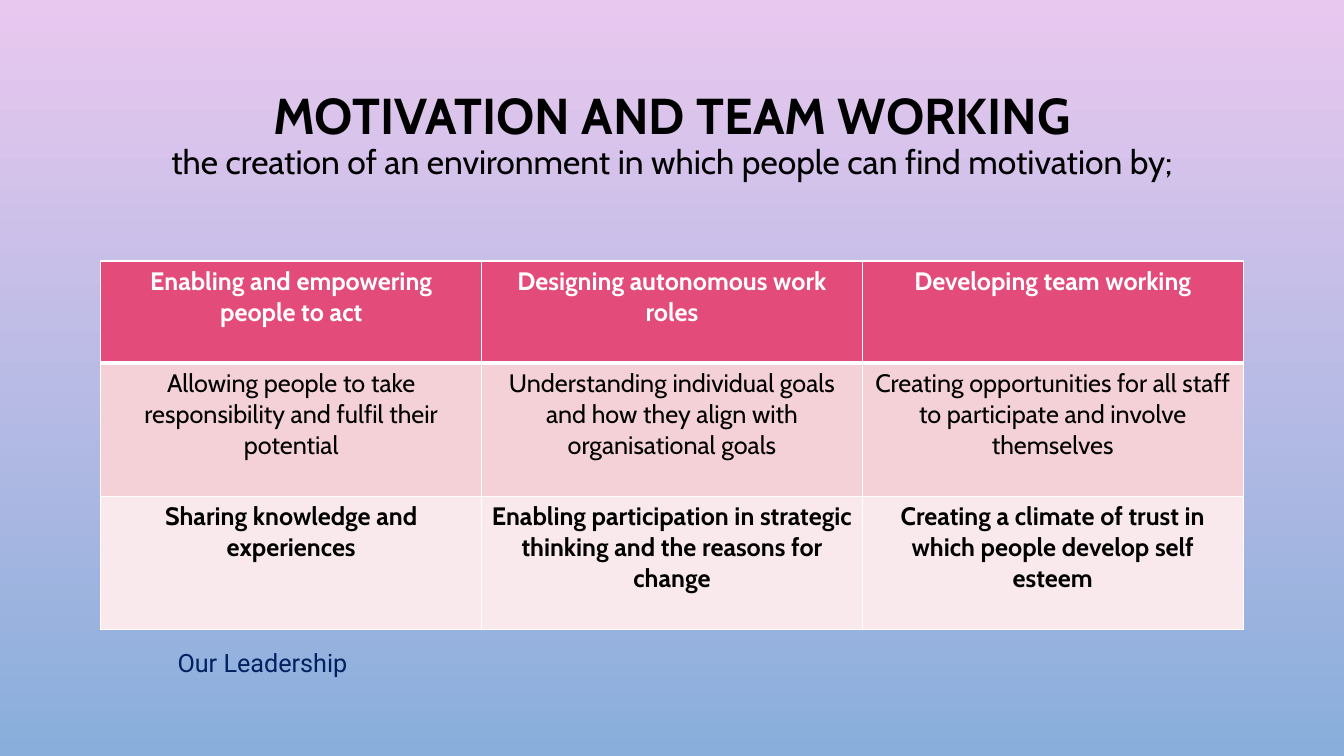
from lxml import etree
from pptx import Presentation
from pptx.dml.color import RGBColor
from pptx.enum.text import MSO_ANCHOR, PP_ALIGN
from pptx.oxml.ns import qn
from pptx.util import Pt

CENTER = PP_ALIGN.CENTER
MIDDLE = MSO_ANCHOR.MIDDLE
BLANK_LAYOUT = 6

COLORS = {
    "sky_top": "E9C8EF",
    "sky_bottom": "89AEDB",
    "header": "E34B7A",
    "band_dark": "F4D0D7",
    "band_light": "FAE9EC",
    "white": "FFFFFF",
    "black": "000000",
    "navy": "002060",
}

# Each row: height, fill, text colour, bold, bottom border width, cell texts
ROWS = [
    (73, "header", "white", True, 3, [
        "Enabling and empowering people to act",
        "Designing autonomous work roles",
        "Developing team working"]),
    (95, "band_dark", "black", False, 1, [
        "Allowing people to take responsibility and fulfil their potential",
        "Understanding individual goals and how they align with organisational goals",
        "Creating opportunities for all staff to participate and involve themselves"]),
    (95, "band_light", "black", True, 1, [
        "Sharing knowledge and experiences",
        "Enabling participation in strategic thinking and the reasons for change",
        "Creating a climate of trust in which people develop self esteem"]),
]


def rgb(name):
    return RGBColor.from_string(COLORS[name])


def style_font(font, name, size, color, bold=False):
    font.name = name
    font.size = Pt(size)
    font.bold = bold
    font.color.rgb = rgb(color)


# Background
def paint_background(page):
    fill = page.background.fill
    fill.gradient()
    fill.gradient_angle = 270
    for stop, name in zip(fill.gradient_stops, ("sky_top", "sky_bottom")):
        stop.color.rgb = rgb(name)


# Title and subtitle
def add_title(page, left, top, width, height):
    frame = page.shapes.add_textbox(Pt(left), Pt(top), Pt(width), Pt(height)).text_frame
    frame.word_wrap = True
    frame.vertical_anchor = MIDDLE
    frame.margin_bottom = Pt(33)  # lifts the text above the middle of the box
    lines = [("MOTIVATION AND TEAM WORKING", 36, True),
             ("the creation of an environment in which people can find motivation by;", 24, False)]
    para = frame.paragraphs[0]
    for index, (text, size, bold) in enumerate(lines):
        if index:
            para = frame.add_paragraph()
        para.text = text
        para.alignment = CENTER
        para.line_spacing = 0.9
        style_font(para.font, "Cabin", size, "black", bold)


# Table of ways to motivate
def add_border(cell, side, width):
    line = etree.SubElement(cell._tc.get_or_add_tcPr(), qn(f"a:ln{side}"), w=str(Pt(width)))
    fill = etree.SubElement(line, qn("a:solidFill"))
    etree.SubElement(fill, qn("a:srgbClr"), val=COLORS["white"])


def add_motivation_table(page, left, top, width):
    height = sum(row[0] for row in ROWS)
    columns = len(ROWS[0][-1])
    table = page.shapes.add_table(len(ROWS), columns, Pt(left), Pt(top),
                                  Pt(width), Pt(height)).table
    above = 1
    for row, (row_height, fill, color, bold, below, texts) in enumerate(ROWS):
        table.rows[row].height = Pt(row_height)
        for column, text in enumerate(texts):
            cell = table.cell(row, column)
            for side, line_width in (("L", 1), ("R", 1), ("T", above), ("B", below)):
                add_border(cell, side, line_width)
            cell.fill.solid()
            cell.fill.fore_color.rgb = rgb(fill)
            cell.text = text
            para = cell.text_frame.paragraphs[0]
            para.alignment = CENTER
            style_font(para.font, "Cabin", 18, color, bold)
        above = below


# Footer
def add_footer(page, left, top, width, height):
    frame = page.shapes.add_textbox(Pt(left), Pt(top), Pt(width), Pt(height)).text_frame
    frame.word_wrap = False
    frame.vertical_anchor = MIDDLE
    para = frame.paragraphs[0]
    para.text = "Our Leadership"
    para.alignment = CENTER
    style_font(para.font, "Roboto", 18, "navy")


def main():
    deck = Presentation()
    deck.slide_width, deck.slide_height = Pt(960), Pt(540)
    page = deck.slides.add_slide(deck.slide_layouts[BLANK_LAYOUT])
    paint_background(page)
    margin, content_width = 72, 816
    add_title(page, margin, 49, content_width, 126)
    add_motivation_table(page, margin, 186.5, content_width)
    add_footer(page, margin, 458.5, 231, 29.5)
    deck.save("out.pptx")


if __name__ == "__main__":
    main()
